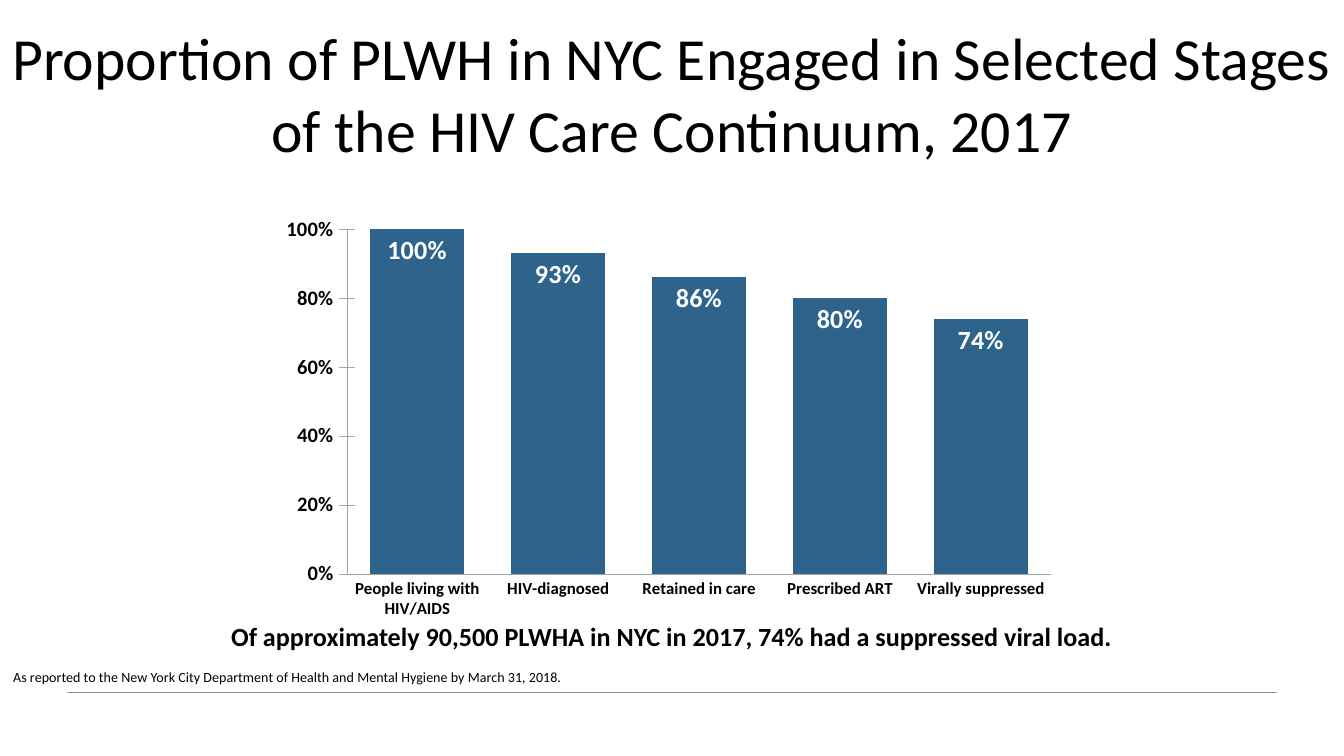
from lxml import etree
from pptx import Presentation
from pptx.chart.data import CategoryChartData
from pptx.dml.color import RGBColor
from pptx.enum.chart import XL_CHART_TYPE as ChartType
from pptx.enum.chart import XL_LABEL_POSITION as LabelPosition
from pptx.enum.chart import XL_TICK_MARK as TickMark
from pptx.enum.shapes import MSO_CONNECTOR as Connector
from pptx.enum.text import MSO_ANCHOR as Anchor
from pptx.enum.text import PP_ALIGN as Align
from pptx.oxml.ns import qn
from pptx.util import Pt

FONT = "Calibri"
BLACK = "000000"
AXIS_GRAY = "A6A6A6"


def color(hex_string):
    return RGBColor.from_string(hex_string)


def style_font(font, size, bold=False, hex_string=BLACK):
    font.name = FONT
    font.size = Pt(size)
    font.bold = bold
    font.color.rgb = color(hex_string)


presentation = Presentation()
presentation.slide_width = Pt(720)
presentation.slide_height = Pt(405)
slide = presentation.slides.add_slide(presentation.slide_layouts[6])

# Footer rule
rule = slide.shapes.add_connector(
    Connector.STRAIGHT, Pt(36), Pt(370.8), Pt(684), Pt(370.8))
rule.line.color.rgb = color("959595")
rule.line.width = Pt(0.25)
etree.SubElement(rule._element.spPr, qn("a:effectLst"))

# Title, key message and source note: top, width, height, size, bold, alignment
texts = [
    ("Proportion of PLWH in NYC Engaged in Selected Stages of the HIV Care "
     "Continuum, 2017", 26, 720, 47.5, 32, False, Align.CENTER, 5),
    ("Of approximately 90,500 PLWHA in NYC in 2017, 74% had a suppressed "
     "viral load.", 328.5, 720, 24.5, 14, True, Align.CENTER, 7.2),
    ("As reported to the New York City Department of Health and Mental "
     "Hygiene by March 31, 2018.", 354.25, 344, 16.5, 7.5, False, Align.LEFT, 7.2),
]
for text, top, width, height, size, bold, alignment, inset in texts:
    shape = slide.shapes.add_textbox(0, Pt(top), Pt(width), Pt(height))
    frame = shape.text_frame
    frame.word_wrap = True
    frame.vertical_anchor = Anchor.MIDDLE
    frame.margin_left = frame.margin_right = Pt(inset)
    frame.margin_top = frame.margin_bottom = Pt(3)
    paragraph = frame.paragraphs[0]
    paragraph.alignment = alignment
    run = paragraph.add_run()
    run.text = text
    style_font(run.font, size, bold)

# Care continuum chart
chart_data = CategoryChartData(number_format="0%")
chart_data.categories = [
    "People living with\nHIV/AIDS", "HIV-diagnosed", "Retained in care",
    "Prescribed ART", "Virally suppressed"]
chart_data.add_series("Series 1", [1, 0.93, 0.86, 0.8, 0.74])
chart = slide.shapes.add_chart(
    ChartType.COLUMN_CLUSTERED, Pt(152.64), Pt(108), Pt(436.32), Pt(227.52),
    chart_data).chart
chart.has_title = False
chart.has_legend = False
style_font(chart.font, 11, True)

category_axis, value_axis = chart.category_axis, chart.value_axis
for axis, size, tick in [(category_axis, 9, TickMark.NONE),
                         (value_axis, 11, TickMark.CROSS)]:
    axis.major_tick_mark = tick
    axis.minor_tick_mark = TickMark.NONE
    axis.has_major_gridlines = False
    axis.format.line.color.rgb = color(AXIS_GRAY)
    axis.format.line.width = Pt(0.28)
    style_font(axis.tick_labels.font, size, True)
value_axis.minimum_scale = 0
value_axis.maximum_scale = 1
value_axis.major_unit = 0.2
value_axis.tick_labels.number_format = "0%"
value_axis.tick_labels.number_format_is_linked = False

plot = chart.plots[0]
plot.gap_width = 50
plot.vary_by_categories = False
series = plot.series[0]
series.format.fill.solid()
series.format.fill.fore_color.rgb = color("2E648C")
labels = series.data_labels
labels.show_value = True
labels.position = LabelPosition.INSIDE_END
labels.number_format = "0%"
labels.number_format_is_linked = False
style_font(labels.font, 14, True, "FFFFFF")

# Fixed inner plot area, as fractions of the chart
plot_area = chart._chartSpace.chart.plotArea
for old_layout in plot_area.findall(qn("c:layout")):
    plot_area.remove(old_layout)
layout = etree.Element(qn("c:layout"))
manual_layout = etree.SubElement(layout, qn("c:manualLayout"))
for tag, value in [("layoutTarget", "inner"), ("xMode", "edge"),
                   ("yMode", "edge"), ("x", "0.076"), ("y", "0.065"),
                   ("w", "0.865"), ("h", "0.812")]:
    etree.SubElement(manual_layout, qn(f"c:{tag}")).set("val", value)
plot_area.insert(0, layout)

presentation.save("out.pptx")
